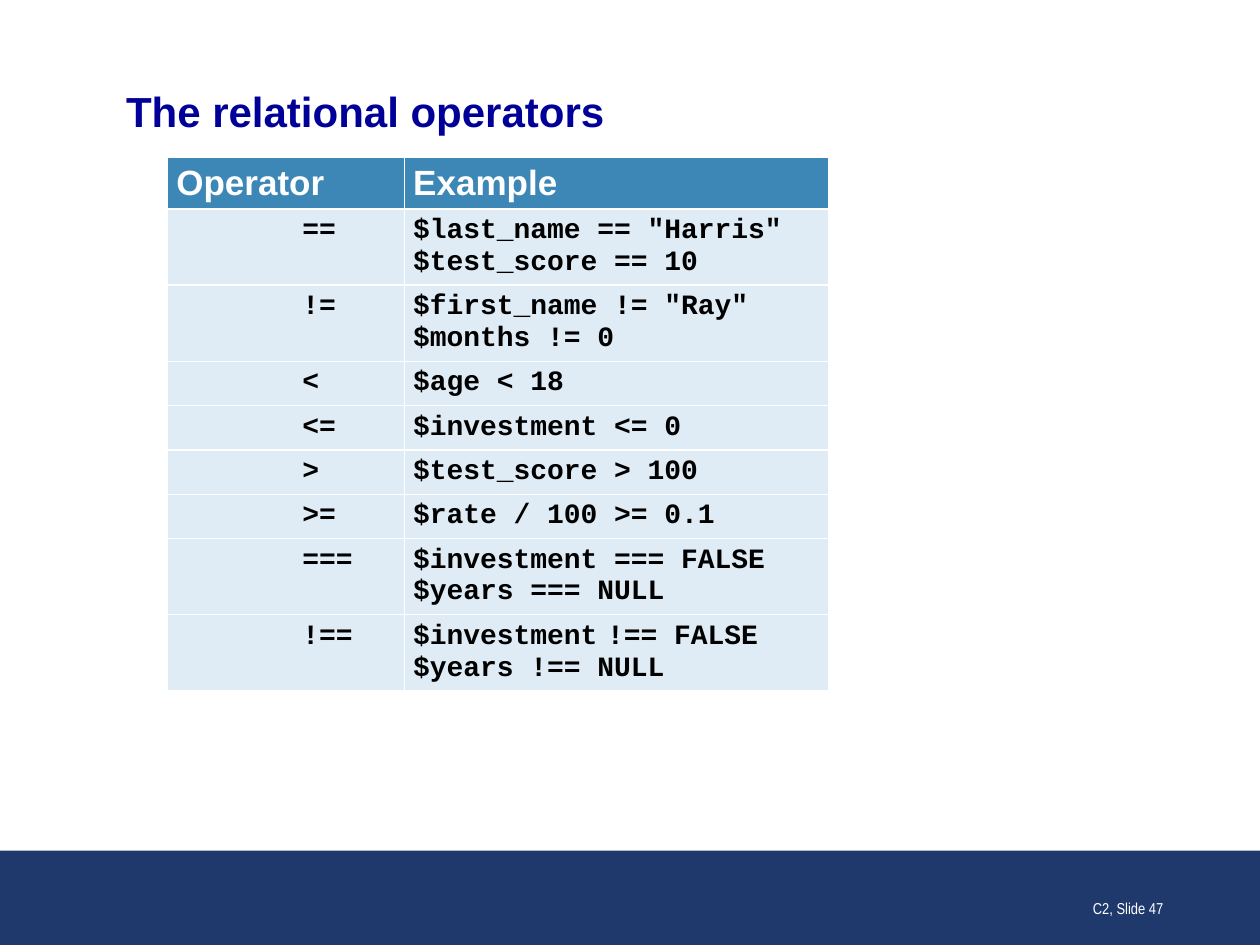
from dataclasses import dataclass

from pptx import Presentation
from pptx.dml.color import RGBColor
from pptx.enum.shapes import MSO_SHAPE
from pptx.enum.text import MSO_ANCHOR, PP_ALIGN
from pptx.util import Inches, Pt

# Content: each line is a list of text parts; a part may carry its own size
TITLE = "The relational operators"
HEADINGS = ("Operator", "Example")
SMALL_SPACE = (" ", 9)
OPERATORS = [
    ("==", [['$last_name == "Harris"'], ["$test_score == 10"]]),
    ("!=", [['$first_name != "Ray"'], ["$months != 0"]]),
    ("<", [["$age < 18"]]),
    ("<=", [["$investment <= 0"]]),
    (">", [["$test_score > 100"]]),
    (">=", [["$rate / 100 >= 0.1"]]),
    ("===", [["$investment === FALSE"], ["$years === NULL"]]),
    ("!==", [["$investment", SMALL_SPACE, "!== FALSE"], ["$years !== NULL"]]),
]
FOOTER = "C2, Slide 47"


@dataclass(frozen=True)
class Theme:
    title: str = "000099"
    band: str = "20396D"
    header: str = "3D87B7"
    row: str = "DFECF5"
    light: str = "FFFFFF"
    dark: str = "000000"
    heading_font: str = "Arial"
    code_font: str = "Courier New"
    footer_font: str = "Arial Narrow"
    title_size: int = 24
    header_size: int = 20
    code_size: int = 16
    footer_size: int = 9


THEME = Theme()

# Layout in inches
WIDTH, HEIGHT = 10, 7.5
BAND_HEIGHT = HEIGHT / 10
TABLE_LEFT, TABLE_TOP = 1.33, 1.25
COLUMNS = (1.88, 3.37)
HEADER_HEIGHT, LINE_HEIGHT = 0.41, 0.25
PAD_X, PAD_Y = 0.07, 0.05
OPERATOR_INDENT = 1


def write(frame, lines, *, size, font, color, bold=False,
          align=PP_ALIGN.LEFT, indent=0):
    """Write lines of text parts into one paragraph."""
    para = frame.paragraphs[0]
    para.alignment = align
    if indent:
        properties = para._p.get_or_add_pPr()
        properties.set("marL", str(Inches(indent)))
        properties.set("indent", "0")
    for number, line in enumerate(lines):
        if number:
            para.add_line_break()
        for part in line:
            text, part_size = part if isinstance(part, tuple) else (part, size)
            span = para.add_run()
            span.text = text
            span.font.size = Pt(part_size)
            span.font.name = font
            span.font.bold = bold
            span.font.color.rgb = RGBColor.from_string(color)


def set_insets(target, horizontal, vertical):
    target.margin_left = target.margin_right = Inches(horizontal)
    target.margin_top = target.margin_bottom = Inches(vertical)


def place(shape, left, top, width, height):
    shape.left, shape.top = Inches(left), Inches(top)
    shape.width, shape.height = Inches(width), Inches(height)


def fill(target, color):
    target.fill.solid()
    target.fill.fore_color.rgb = RGBColor.from_string(color)


def add_title(page):
    title = page.shapes.title
    place(title, 1, 0.68, 8, 0.4)
    set_insets(title.text_frame, 0, 0)
    title.text_frame.vertical_anchor = MSO_ANCHOR.MIDDLE
    write(title.text_frame, [[TITLE]], size=THEME.title_size,
          font=THEME.heading_font, color=THEME.title, bold=True)


def add_operator_table(page):
    heights = [HEADER_HEIGHT] + [
        LINE_HEIGHT * len(lines) + 2 * PAD_Y for _, lines in OPERATORS]
    table = page.shapes.add_table(
        len(heights), len(COLUMNS), Inches(TABLE_LEFT), Inches(TABLE_TOP),
        Inches(sum(COLUMNS)), Inches(sum(heights))).table
    for column, width in zip(table.columns, COLUMNS):
        column.width = Inches(width)
    for row, height in zip(table.rows, heights):
        row.height = Inches(height)

    header = dict(size=THEME.header_size, font=THEME.heading_font,
                  color=THEME.light, bold=True)
    code = dict(size=THEME.code_size, font=THEME.code_font,
                color=THEME.dark, bold=True)
    rows = [[[[heading]] for heading in HEADINGS]]
    rows += [[[[operator]], lines] for operator, lines in OPERATORS]
    for row_number, row in enumerate(rows):
        for column_number, lines in enumerate(row):
            cell = table.cell(row_number, column_number)
            set_insets(cell, PAD_X, PAD_Y)
            fill(cell, THEME.row if row_number else THEME.header)
            is_operator = row_number > 0 and column_number == 0
            write(cell.text_frame, lines,
                  indent=OPERATOR_INDENT if is_operator else 0,
                  **(code if row_number else header))


def add_footer(page):
    band_top = HEIGHT - BAND_HEIGHT
    band = page.shapes.add_shape(
        MSO_SHAPE.RECTANGLE, 0, Inches(band_top), Inches(WIDTH),
        Inches(BAND_HEIGHT))
    band.shadow.inherit = False
    band.line.fill.background()
    fill(band, THEME.band)

    box = page.shapes.add_textbox(
        Inches(7.25), Inches(band_top + 0.08), Inches(2.08), Inches(0.5))
    box.text_frame.word_wrap = True
    box.text_frame.vertical_anchor = MSO_ANCHOR.BOTTOM
    write(box.text_frame, [[FOOTER]], size=THEME.footer_size,
          font=THEME.footer_font, color=THEME.light, align=PP_ALIGN.RIGHT)


def main():
    deck = Presentation()
    deck.slide_width, deck.slide_height = Inches(WIDTH), Inches(HEIGHT)
    page = deck.slides.add_slide(deck.slide_layouts.get_by_name("Title Only"))
    add_title(page)
    add_operator_table(page)
    add_footer(page)
    deck.save("out.pptx")


if __name__ == "__main__":
    main()
